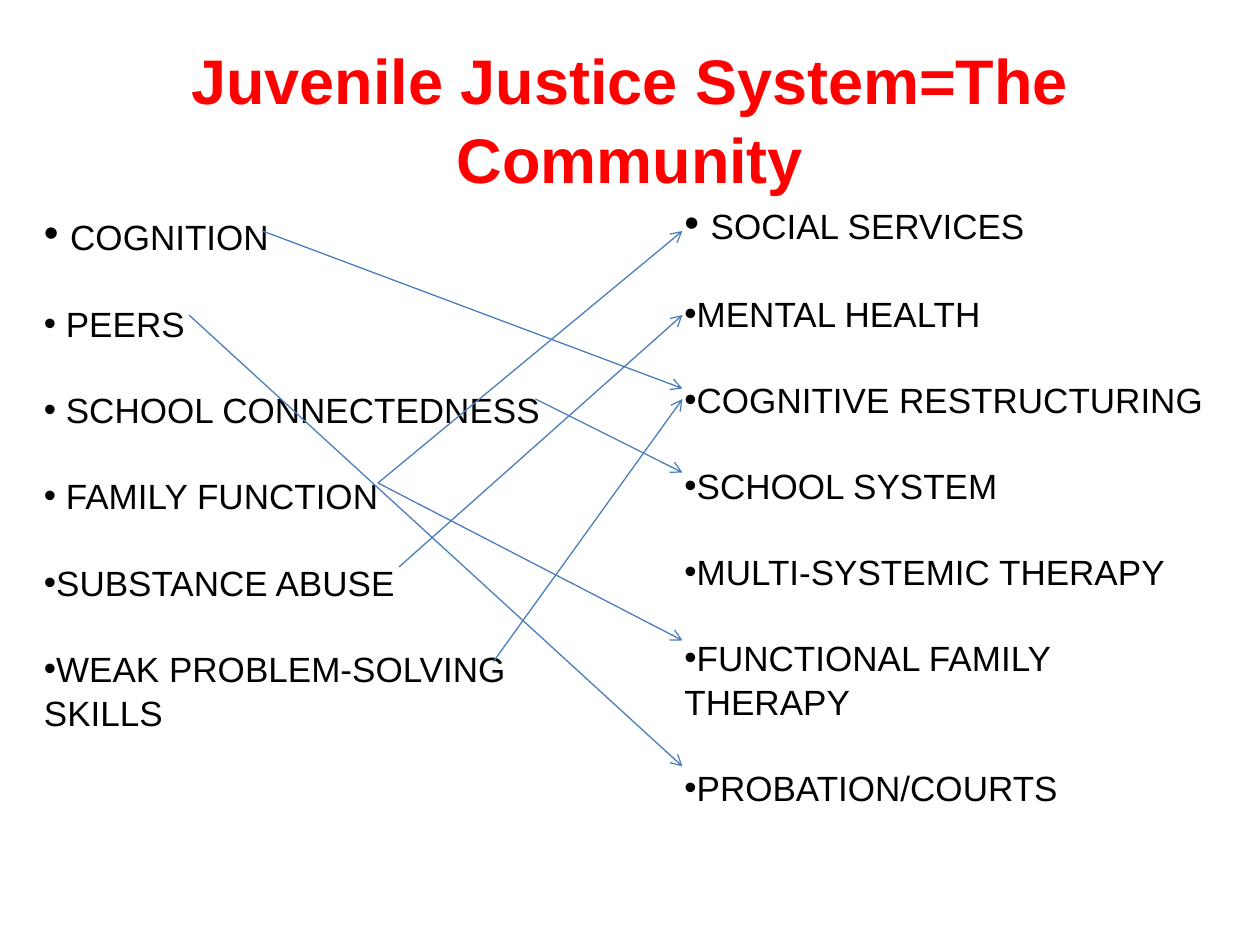
from lxml.etree import SubElement
from pptx import Presentation
from pptx.dml.color import RGBColor
from pptx.enum.shapes import MSO_CONNECTOR
from pptx.enum.text import MSO_AUTO_SIZE, PP_ALIGN
from pptx.oxml.ns import qn
from pptx.util import Inches, Pt

COLORS = {"title": "FF0000", "text": "000000", "arrow": "4B7EBC"}
UNIT = Inches(10) / 120  # the slide is a grid of 120 columns by 90 rows
ARROW_END_COLUMN = 65

TITLE_BOX = (0, 3, 120, 15.6)
RISKS_BOX = (3, 19, 50, 55.3)
SERVICES_BOX = (64, 18, 52, 63.4)

RISKS = [" COGNITION", " PEERS", " SCHOOL CONNECTEDNESS", " FAMILY FUNCTION",
         "SUBSTANCE ABUSE", "WEAK PROBLEM-SOLVING SKILLS"]
SERVICES = [" SOCIAL SERVICES", "MENTAL HEALTH", "COGNITIVE RESTRUCTURING", "SCHOOL SYSTEM",
            "MULTI-SYSTEMIC THERAPY", "FUNCTIONAL FAMILY THERAPY", "PROBATION/COURTS"]

# start column, start row, end row
ARROWS = [
    (25, 22, 37),  # cognition to cognitive restructuring
    (36, 46, 22),  # family function to social services
    (47, 63, 38),  # problem-solving to cognitive restructuring
    (38, 54, 30),  # substance abuse to mental health
    (36, 46, 61),  # family function to functional family therapy
    (51, 38, 45),  # school connectedness to school system
    (18, 30, 73),  # peers to probation
]


def grid(*values):
    return [round(value * UNIT) for value in values]


def add_text_frame(slide, box):
    frame = slide.shapes.add_textbox(*grid(*box)).text_frame
    for name, value in {"word_wrap": True, "auto_size": MSO_AUTO_SIZE.NONE}.items():
        setattr(frame, name, value)
    return frame


def add_run(paragraph, text, color, **formats):
    run = paragraph.add_run()
    run.text = text
    for name, value in {"name": "Arial", **formats}.items():
        setattr(run.font, name, value)
    run.font.color.rgb = RGBColor.from_string(COLORS[color])


def add_title(slide, box, text):
    paragraph = add_text_frame(slide, box).paragraphs[0]
    for name, value in {"alignment": PP_ALIGN.CENTER, "line_spacing": 1.05}.items():
        setattr(paragraph, name, value)
    add_run(paragraph, text, "title", size=Pt(36), bold=True)


def add_bullet(paragraph):
    properties = paragraph._p.get_or_add_pPr()
    for name in ("marL", "indent"):
        properties.set(name, "0")
    SubElement(properties, qn("a:buFont"), typeface="Arial")
    SubElement(properties, qn("a:buChar"), char="•")


def add_bullet_list(slide, box, items):
    """Place a list whose first bullet is larger than the others."""
    frame = add_text_frame(slide, box)
    for index, item in enumerate(items):
        paragraph = frame.add_paragraph() if index else frame.paragraphs[0]
        spacing = {"line_spacing": 1.05, "space_before": Pt(24 if index else 0)}
        for name, value in spacing.items():
            setattr(paragraph, name, value)
        add_bullet(paragraph)
        if index == 0:
            add_run(paragraph, " ", "text", size=Pt(24))
            item = item.strip()
        add_run(paragraph, item, "text", size=Pt(20))


def add_arrows(slide, end_column, arrows):
    for start_column, start_row, end_row in arrows:
        connector = slide.shapes.add_connector(
            MSO_CONNECTOR.STRAIGHT, *grid(start_column, start_row, end_column, end_row))
        connector.line.width = Pt(0.75)
        connector.line.color.rgb = RGBColor.from_string(COLORS["arrow"])
        SubElement(connector.line._get_or_add_ln(), qn("a:tailEnd"), type="arrow")
        SubElement(connector._element.spPr, qn("a:effectLst"))


def main():
    presentation = Presentation()
    presentation.slide_width, presentation.slide_height = grid(120, 90)
    slide = presentation.slides.add_slide(presentation.slide_layouts[6])
    add_title(slide, TITLE_BOX, "Juvenile Justice System=The Community")
    add_bullet_list(slide, RISKS_BOX, RISKS)
    add_bullet_list(slide, SERVICES_BOX, SERVICES)
    add_arrows(slide, ARROW_END_COLUMN, ARROWS)
    presentation.save("out.pptx")


if __name__ == "__main__":
    main()
